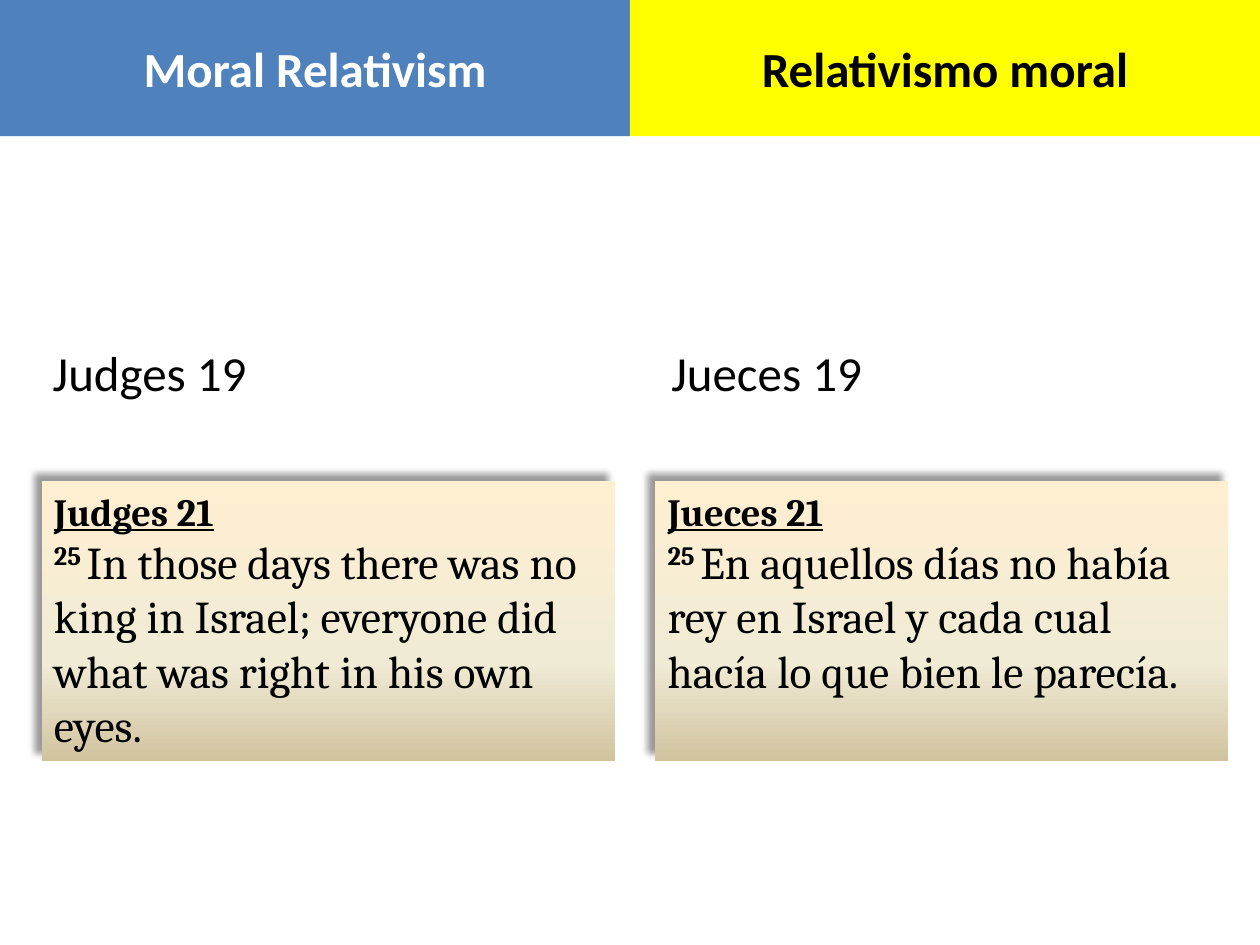
from lxml.etree import SubElement
from pptx import Presentation
from pptx.dml.color import RGBColor
from pptx.enum.shapes import MSO_SHAPE
from pptx.enum.text import MSO_ANCHOR, MSO_AUTO_SIZE, PP_ALIGN
from pptx.oxml import parse_xml
from pptx.oxml.ns import nsdecls, qn
from pptx.util import Inches, Pt

HEADERS = [
    ("Moral Relativism", "4F81BD", "FFFFFF"),
    ("Relativismo moral", "FFFF00", "000000"),
]
READINGS = [("Judges 19", 0.32, 4.35), ("Jueces 19", 5.23, 4.55)]
VERSES = [
    ("Judges 21", "25 ", "In those days there was no king in Israel; "
     "everyone did what was right in his own eyes.", 0.33),
    ("Jueces 21", "25 ", "En aquellos días no había rey en Israel y "
     "cada cual hacía lo que bien le parecía.", 5.2),
]
PARCHMENT = [(0, "FFEFD1"), (65, "F0EBD5"), (100, "D1C39F")]
HEADER_WIDTH, HEADER_HEIGHT = 5, 1.08


def color(value):
    return RGBColor.from_string(value)


def format_run(run, size, name="Calibri", fill="000000", bold=False):
    run.font.size = Pt(size)
    run.font.name = name
    run.font.color.rgb = color(fill)
    run.font.bold = bold


def place(shape, left, top, width, height):
    shape.left, shape.top = Inches(left), Inches(top)
    shape.width, shape.height = Inches(width), Inches(height)


def format_header(shape, index, text, fill, text_color):
    place(shape, index * HEADER_WIDTH, 0, HEADER_WIDTH, HEADER_HEIGHT)
    shape.fill.solid()
    shape.fill.fore_color.rgb = color(fill)
    shape.line.fill.background()
    shape.shadow.inherit = False
    frame = shape.text_frame
    frame.text = text
    frame.word_wrap = True
    frame.auto_size = MSO_AUTO_SIZE.NONE
    frame.vertical_anchor = MSO_ANCHOR.MIDDLE
    paragraph = frame.paragraphs[0]
    paragraph.alignment = PP_ALIGN.CENTER
    format_run(paragraph.runs[0], 28, fill=text_color, bold=True)


def add_text(slide, text, left, top, width, height):
    box = slide.shapes.add_textbox(*map(Inches, (left, top, width, height)))
    frame = box.text_frame
    frame.word_wrap = True
    frame.auto_size = MSO_AUTO_SIZE.SHAPE_TO_FIT_TEXT
    frame.text = text
    return box


def add_parchment(shape):
    properties = shape.fill._xPr
    properties.remove(properties.find(qn("a:noFill")))
    stops = "".join(
        f'<a:gs pos="{position * 1000}"><a:srgbClr val="{value}"/></a:gs>'
        for position, value in PARCHMENT
    )
    properties.append(parse_xml(
        f'<a:gradFill {nsdecls("a")} rotWithShape="1"><a:gsLst>{stops}</a:gsLst>'
        '<a:lin ang="5400000" scaled="0"/></a:gradFill>'
    ))
    effects = SubElement(properties, qn("a:effectLst"))
    effects.append(parse_xml(
        f'<a:outerShdw {nsdecls("a")} blurRad="{Pt(4)}" dist="{Pt(6)}" '
        'dir="13500000" algn="br" rotWithShape="0"><a:srgbClr val="000000">'
        '<a:alpha val="40000"/></a:srgbClr></a:outerShdw>'
    ))


def add_verse(slide, heading, number, text, left):
    box = add_text(slide, heading, left, 3.82, 4.55, 2.22)
    add_parchment(box)
    heading_run = box.text_frame.paragraphs[0].runs[0]
    format_run(heading_run, 22, "Cambria", bold=True)
    heading_run.font.underline = True
    paragraph = box.text_frame.add_paragraph()
    for part, bold in ((number, True), (text, False)):
        run = paragraph.add_run()
        run.text = part
        format_run(run, 26, "Cambria", bold=bold)
    paragraph.runs[0].font._element.set("baseline", "30000")


def main():
    """Build the bilingual slide on moral relativism."""
    presentation = Presentation()
    presentation.slide_width, presentation.slide_height = Inches(10), Inches(7.5)
    slide = presentation.slides.add_slide(presentation.slide_layouts[5])
    second_header = slide.shapes.add_shape(MSO_SHAPE.RECTANGLE, 0, 0, 0, 0)
    for index, shape in enumerate((slide.shapes.title, second_header)):
        format_header(shape, index, *HEADERS[index])
    for text, left, width in READINGS:
        box = add_text(slide, text, left, 2.67, width, 0.57)
        format_run(box.text_frame.paragraphs[0].runs[0], 28)
    for verse in VERSES:
        add_verse(slide, *verse)
    presentation.save("out.pptx")


if __name__ == "__main__":
    main()
